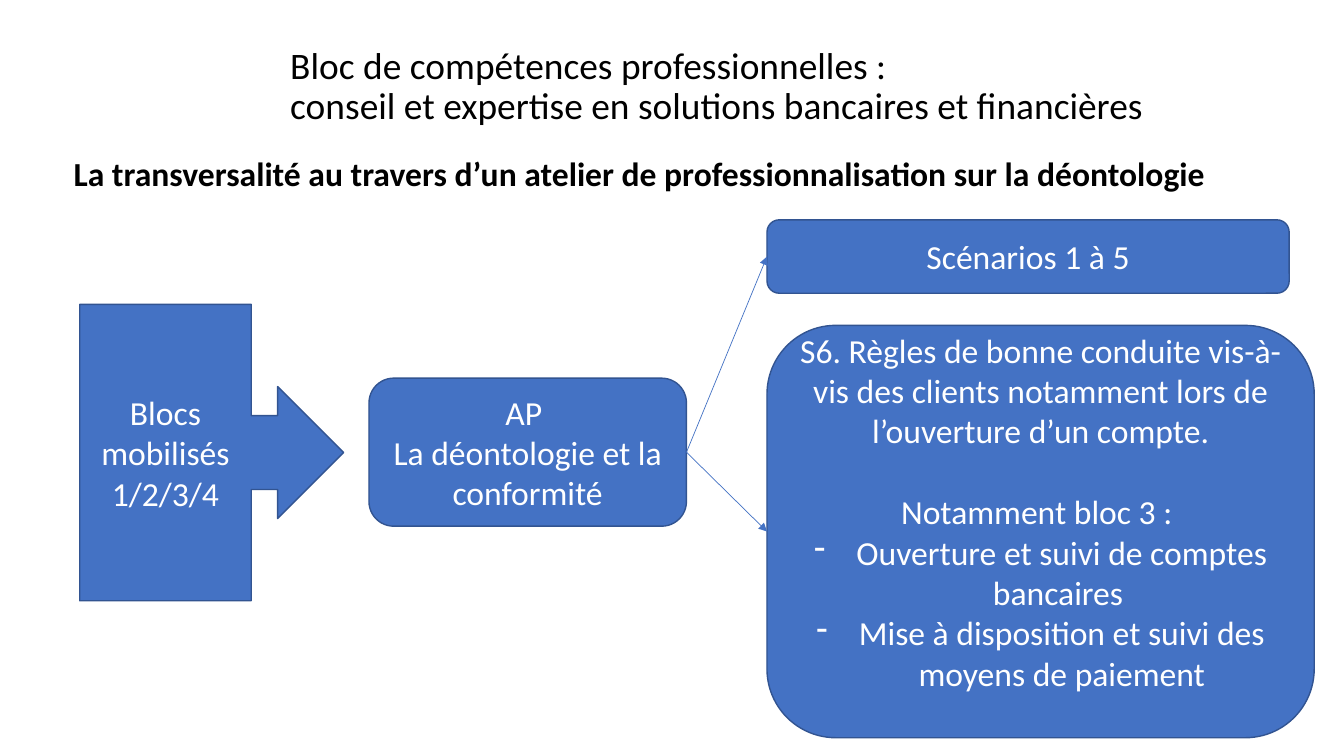
"""Build the slide on a professional workshop about ethics in banking."""
from dataclasses import dataclass

from lxml.etree import SubElement
from pptx import Presentation
from pptx.dml.color import RGBColor
from pptx.enum.shapes import MSO_CONNECTOR, MSO_SHAPE
from pptx.enum.text import MSO_ANCHOR, MSO_AUTO_SIZE, PP_ALIGN
from pptx.oxml.ns import qn
from pptx.shapes.autoshape import Shape
from pptx.slide import Slide
from pptx.text.text import _Paragraph
from pptx.util import Cm, Pt

BLACK = RGBColor(0x00, 0x00, 0x00)
WHITE = RGBColor(0xFF, 0xFF, 0xFF)
BLUE = RGBColor(0x44, 0x72, 0xC4)
DARK_BLUE = RGBColor(0x32, 0x54, 0x91)
FONT = "Calibri"
BODY_SIZE = 24
LEFT_SITE, RIGHT_SITE = 1, 3


@dataclass(frozen=True)
class Line:
    text: str
    dashed: bool = False
    space_before: float = 0


@dataclass(frozen=True)
class Box:
    left: float
    top: float
    width: float
    height: float
    lines: tuple[Line, ...]
    preset: MSO_SHAPE = MSO_SHAPE.ROUNDED_RECTANGLE
    adjustments: tuple[float, ...] = ()
    bottom_inset: float = 0.13


WORKSHOP = Box(9.3, 9.53, 8, 3.73, (Line("AP "), Line("La déontologie et la conformité")))
BLOCKS = Box(
    2.01, 7.67, 6.65, 7.47,
    (Line("Blocs mobilisés"), Line("1/2/3/4")),
    MSO_SHAPE.RIGHT_ARROW_CALLOUT,
    (0.28, 0.25, 0.25, 0.65),
)
CONDUCT_RULES = Box(
    19.33, 8.2, 13.79, 10.39,
    (
        Line("S6. Règles de bonne conduite vis-à-vis des clients notamment lors de l’ouverture d’un compte."),
        Line("Notamment bloc 3 : ", space_before=29),
        Line("Ouverture et suivi de comptes bancaires ", dashed=True),
        Line("Mise à disposition et suivi des moyens de paiement", dashed=True),
    ),
    bottom_inset=1.15,
)
SCENARIOS = Box(19.33, 5.54, 13.16, 1.85, (Line("Scénarios 1 à 5"),))


def format_runs(paragraph: _Paragraph, size: float, color: RGBColor, bold: bool = False) -> None:
    """Apply the slide font to every run of a paragraph."""
    for run in paragraph.runs:
        run.font.name = FONT
        run.font.size = Pt(size)
        run.font.bold = bold
        run.font.color.rgb = color


def set_indent(paragraph: _Paragraph, margin: float, hanging: float, dash: bool) -> None:
    """Set the indent of a paragraph and its dash, if any."""
    properties = paragraph._p.get_or_add_pPr()
    properties.set("marL", str(Cm(margin)))
    properties.set("indent", str(-Cm(hanging)))
    if dash:
        SubElement(properties, qn("a:buFontTx"))
        SubElement(properties, qn("a:buChar"), char="-")
    else:
        SubElement(properties, qn("a:buNone"))


def fill_placeholder(
    placeholder: Shape, left: float, top: float, width: float, height: float,
    text: str, size: float, anchor: MSO_ANCHOR, bold: bool = False,
) -> _Paragraph:
    """Place a placeholder, write its text and return its paragraph."""
    placeholder.left, placeholder.top = Cm(left), Cm(top)
    placeholder.width, placeholder.height = Cm(width), Cm(height)
    frame = placeholder.text_frame
    frame.text = text
    frame.auto_size = MSO_AUTO_SIZE.NONE
    frame.vertical_anchor = anchor
    paragraph = frame.paragraphs[0]
    paragraph.alignment = PP_ALIGN.LEFT
    paragraph.line_spacing = 0.9
    format_runs(paragraph, size, BLACK, bold)
    return paragraph


def draw_box(slide: Slide, box: Box) -> Shape:
    """Draw a blue box with its centred lines of text."""
    shape = slide.shapes.add_shape(
        box.preset, Cm(box.left), Cm(box.top), Cm(box.width), Cm(box.height)
    )
    for index, adjustment in enumerate(box.adjustments):
        shape.adjustments[index] = adjustment
    shape.shadow.inherit = False
    shape.fill.solid()
    shape.fill.fore_color.rgb = BLUE
    shape.line.color.rgb = DARK_BLUE
    shape.line.width = Pt(1)
    frame = shape.text_frame
    frame.word_wrap = True
    frame.vertical_anchor = MSO_ANCHOR.MIDDLE
    frame.margin_bottom = Cm(box.bottom_inset)
    frame.text = "\n".join(line.text for line in box.lines)
    for paragraph, line in zip(frame.paragraphs, box.lines):
        paragraph.alignment = PP_ALIGN.CENTER
        paragraph.space_before = Pt(line.space_before)
        if line.dashed:
            set_indent(paragraph, 1.07, 1.07, dash=True)
        format_runs(paragraph, BODY_SIZE, WHITE)
    return shape


def draw_arrow(slide: Slide, source: Shape, target: Shape) -> None:
    """Link the right side of one box to the left side of another."""
    arrow = slide.shapes.add_connector(MSO_CONNECTOR.STRAIGHT, 0, 0, 0, 0)
    arrow.begin_connect(source, RIGHT_SITE)
    arrow.end_connect(target, LEFT_SITE)
    arrow.line.color.rgb = BLUE
    arrow.line.width = Pt(0.5)
    SubElement(arrow.line._get_or_add_ln(), qn("a:tailEnd"), type="triangle")
    SubElement(arrow._element.spPr, qn("a:effectLst"))


def main() -> None:
    """Build and save the presentation."""
    presentation = Presentation()
    presentation.slide_width, presentation.slide_height = Cm(33.87), Cm(19.05)
    slide = presentation.slides.add_slide(presentation.slide_layouts[1])
    fill_placeholder(
        slide.shapes.title, 7.06, 0.86, 31.19, 2.67,
        "Bloc de compétences professionnelles : \vconseil et expertise en solutions bancaires et financières",
        26.7, MSO_ANCHOR.MIDDLE,
    )
    subtitle = fill_placeholder(
        slide.placeholders[1], 0.94, 3.84, 31.19, 1.55,
        "La transversalité au travers d’un atelier de professionnalisation sur la déontologie",
        BODY_SIZE, MSO_ANCHOR.TOP, bold=True,
    )
    subtitle.level = 1
    subtitle.space_before = Pt(5)
    set_indent(subtitle, 0.66, 0, dash=False)

    workshop = draw_box(slide, WORKSHOP)
    draw_box(slide, BLOCKS)
    conduct_rules = draw_box(slide, CONDUCT_RULES)
    scenarios = draw_box(slide, SCENARIOS)
    for outcome in (scenarios, conduct_rules):
        draw_arrow(slide, workshop, outcome)
    presentation.save("out.pptx")


if __name__ == "__main__":
    main()
